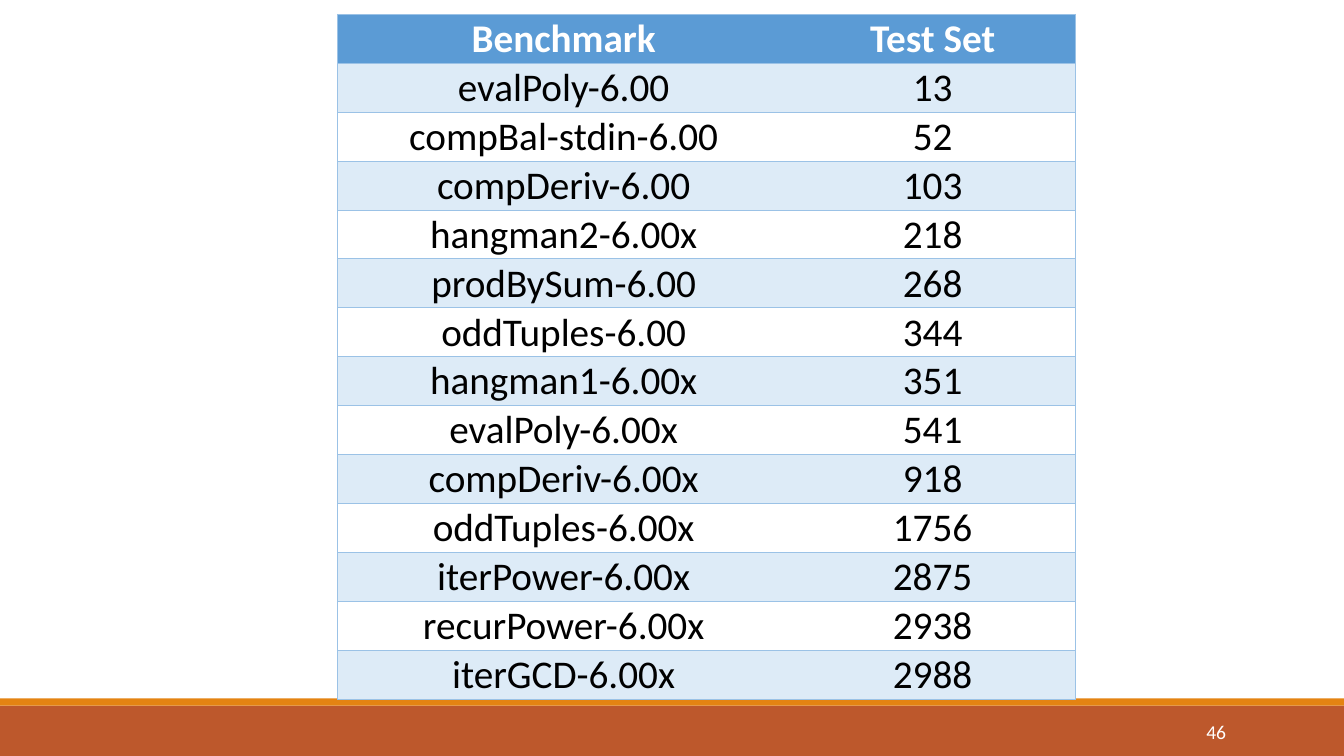
from lxml import etree
from pptx import Presentation
from pptx import util as u
from pptx.dml import color
from pptx.enum import shapes, text
from pptx.oxml import ns

COLORS = {
    "white": "FFFFFF",
    "black": "000000",
    "footer": "BD582C",
    "stripe": "E48312",
    "header": "5B9BD5",
    "band": "DDEBF7",
    "border": "9BC2E6",
}
FONT = "Calibri"
HEADINGS = ("Benchmark", "Test Set")
BENCHMARKS = [
    ("evalPoly-6.00", 13),
    ("compBal-stdin-6.00", 52),
    ("compDeriv-6.00", 103),
    ("hangman2-6.00x", 218),
    ("prodBySum-6.00", 268),
    ("oddTuples-6.00", 344),
    ("hangman1-6.00x", 351),
    ("evalPoly-6.00x", 541),
    ("compDeriv-6.00x", 918),
    ("oddTuples-6.00x", 1756),
    ("iterPower-6.00x", 2875),
    ("recurPower-6.00x", 2938),
    ("iterGCD-6.00x", 2988),
]
COLUMN_WIDTHS = (4.48, 2.84)
ROW_HEIGHT = 0.48


def rgb(name):
    return color.RGBColor.from_string(COLORS[name])


def write_text(frame, words, size, ink, align, bold=False):
    para = frame.paragraphs[0]
    para.alignment = align
    span = para.add_run()
    span.text = words
    span.font.name = FONT
    span.font.size = u.Pt(size)
    span.font.bold = bold
    span.font.color.rgb = rgb(ink)


def add_bar(page, top, height, fill):
    bar = page.shapes.add_shape(
        shapes.MSO_SHAPE.RECTANGLE, 0, u.Inches(top), u.Inches(13.33), u.Inches(height))
    bar.shadow.inherit = False
    bar.fill.solid()
    bar.fill.fore_color.rgb = rgb(fill)
    bar.line.fill.background()


def set_borders(cell, visible):
    """Draw the named sides (L, R, T, B) and clear the others."""
    properties = cell._tc.get_or_add_tcPr()
    for side in "LRTB":
        line = etree.SubElement(properties, ns.qn(f"a:ln{side}"), w=str(u.Pt(0.5)))
        if side in visible:
            fill = etree.SubElement(line, ns.qn("a:solidFill"))
            etree.SubElement(fill, ns.qn("a:srgbClr"), val=COLORS["border"])
        else:
            etree.SubElement(line, ns.qn("a:noFill"))


def format_cell(cell, words, fill, borders, **style):
    cell.margin_left = cell.margin_right = cell.margin_top = u.Inches(0.01)
    cell.margin_bottom = 0
    cell.vertical_anchor = text.MSO_ANCHOR.BOTTOM
    set_borders(cell, borders)
    if fill:
        cell.fill.solid()
        cell.fill.fore_color.rgb = rgb(fill)
    else:
        cell.fill.background()
    write_text(cell.text_frame, words, 28, align=text.PP_ALIGN.CENTER, **style)


def add_benchmark_table(page):
    rows = [HEADINGS] + BENCHMARKS
    table = page.shapes.add_table(
        len(rows), len(HEADINGS), u.Inches(3.35), u.Inches(0.14),
        u.Inches(sum(COLUMN_WIDTHS)), u.Inches(ROW_HEIGHT * len(rows))).table
    table.first_row = table.horz_banding = False
    for column, width in zip(table.columns, COLUMN_WIDTHS):
        column.width = u.Inches(width)
    for r, values in enumerate(rows):
        table.rows[r].height = u.Inches(ROW_HEIGHT)
        heading = r == 0
        fill = "header" if heading else "band" if r % 2 else None
        for c, value in enumerate(values):
            format_cell(table.cell(r, c), str(value), fill, ("LTB", "RTB")[c],
                        ink="white" if heading else "black", bold=heading)


def add_page_number(page, number):
    box = page.shapes.add_textbox(
        u.Inches(10.83), u.Inches(7.06), u.Inches(1.43), u.Inches(0.4))
    frame = box.text_frame
    frame.word_wrap = True
    frame.vertical_anchor = text.MSO_ANCHOR.MIDDLE
    write_text(frame, number, 14, "white", text.PP_ALIGN.RIGHT)


def main():
    deck = Presentation()
    deck.slide_width, deck.slide_height = u.Inches(13.33), u.Inches(7.5)
    page = deck.slides.add_slide(deck.slide_layouts[6])

    # Footer bars
    add_bar(page, 7, 0.5, "footer")
    add_bar(page, 6.93, 0.07, "stripe")

    # Benchmark sizes
    add_benchmark_table(page)

    # Slide number
    add_page_number(page, "46")

    deck.save("out.pptx")


if __name__ == "__main__":
    main()
